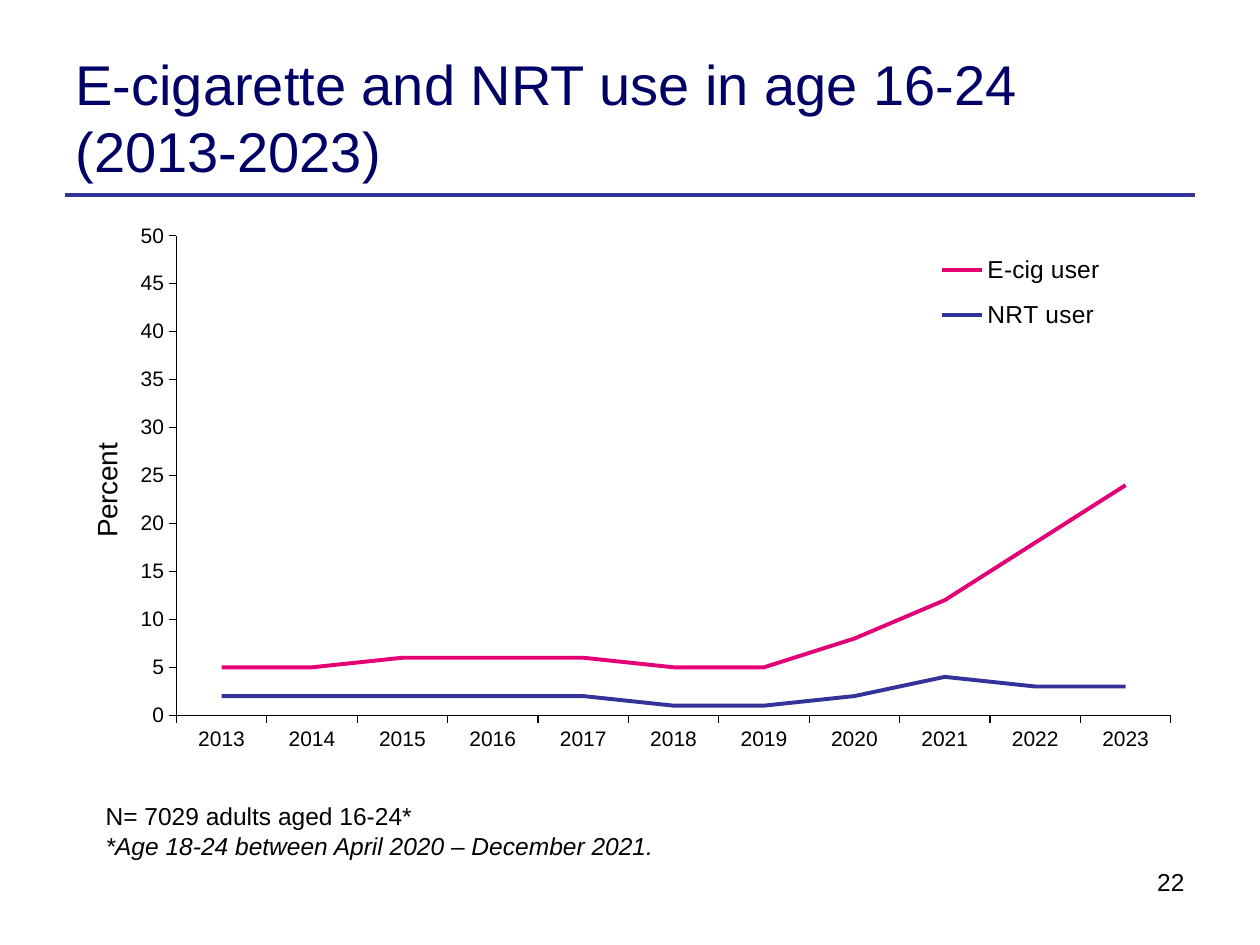
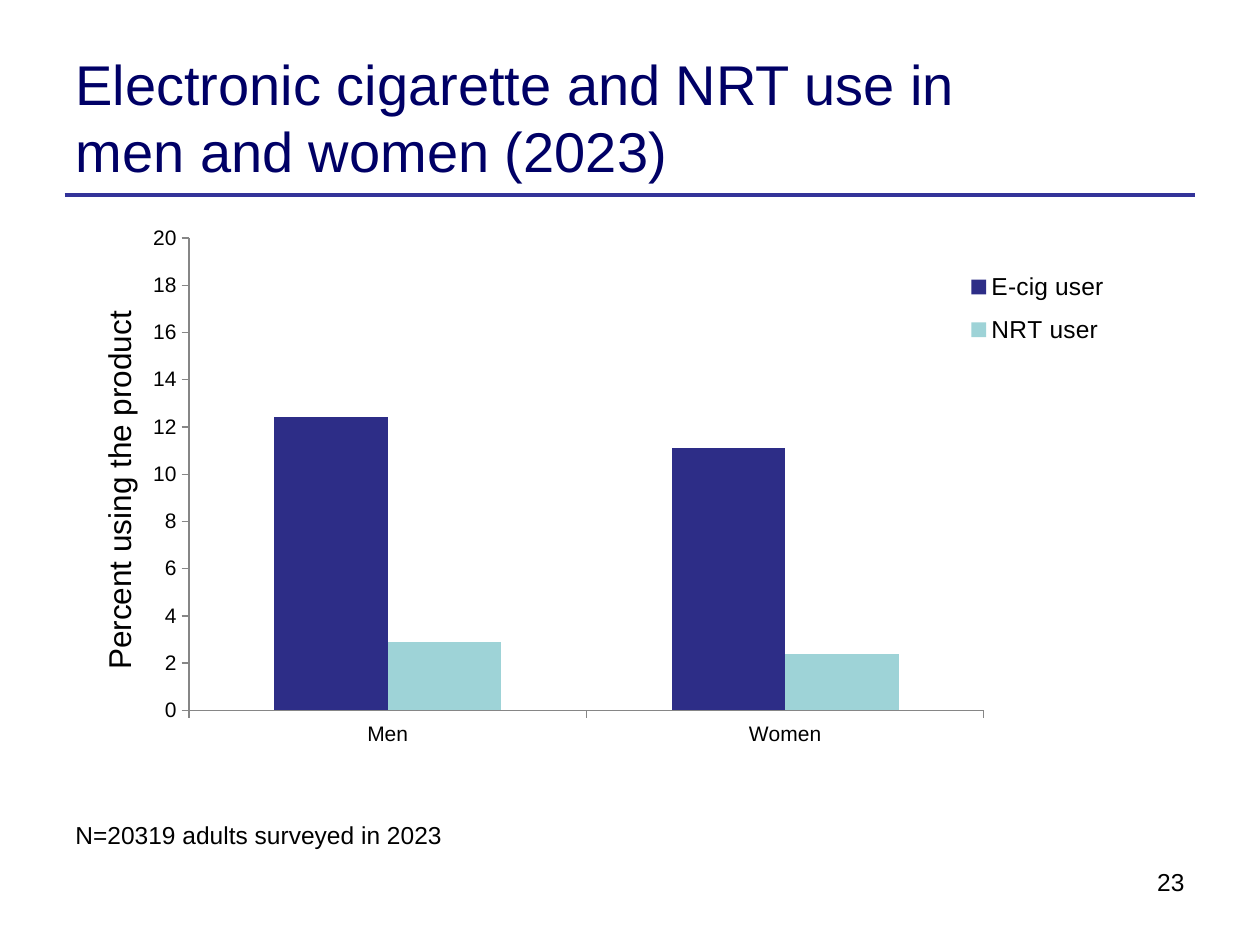
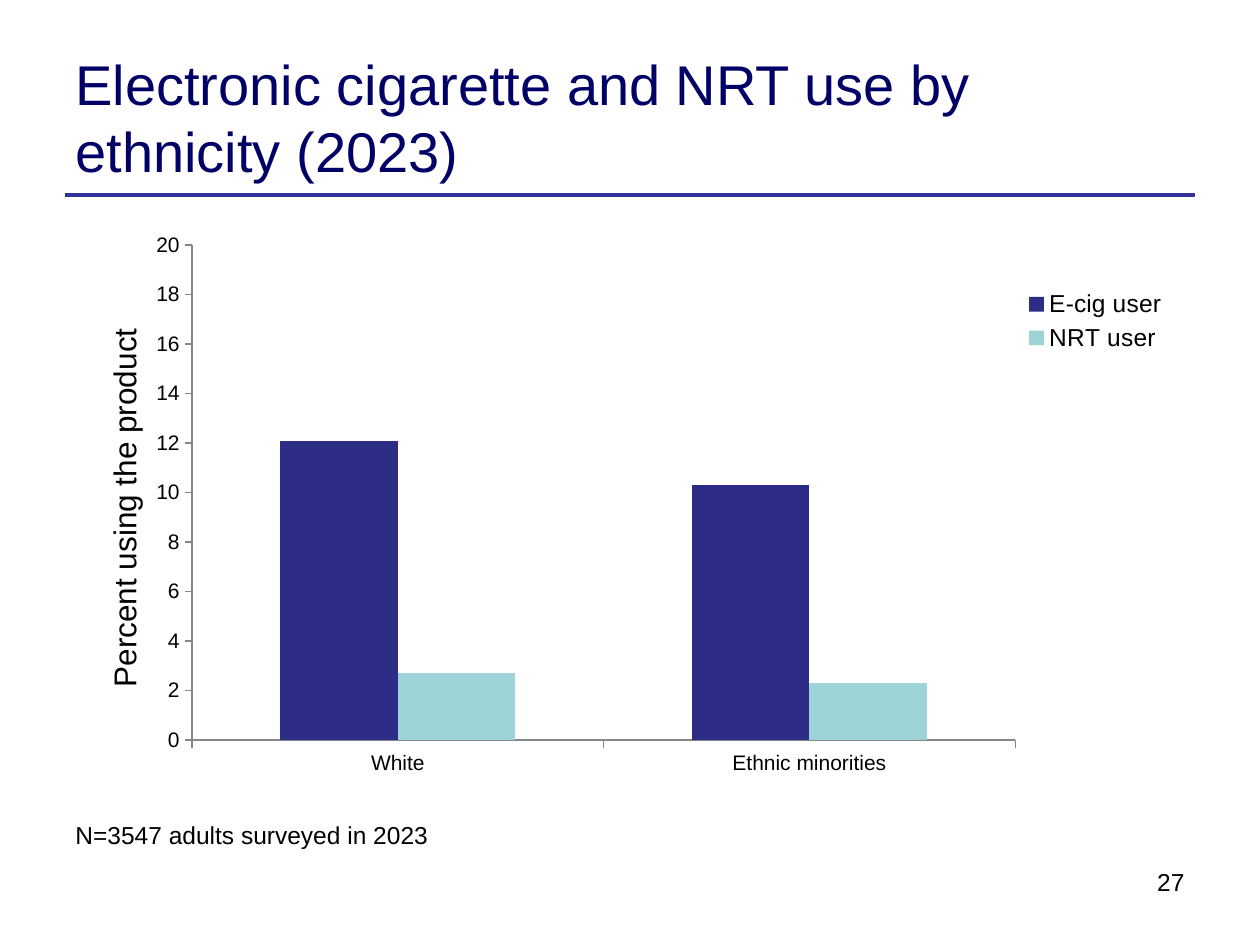
from pptx import Presentation
from pptx.chart.data import CategoryChartData
from pptx.dml.color import RGBColor
from pptx.enum.chart import XL_CHART_TYPE, XL_LEGEND_POSITION, XL_MARKER_STYLE, XL_TICK_MARK
from pptx.enum.shapes import MSO_CONNECTOR
from pptx.enum.text import MSO_ANCHOR, MSO_AUTO_SIZE, PP_ALIGN
from pptx.oxml import parse_xml
from pptx.oxml.ns import nsdecls, qn
from pptx.util import Pt
from lxml import etree

LINE = XL_CHART_TYPE.LINE
COLUMN = XL_CHART_TYPE.COLUMN_CLUSTERED
LEGEND_RIGHT = XL_LEGEND_POSITION.RIGHT
NO_MARKER = XL_MARKER_STYLE.NONE
TICK_OUTSIDE, TICK_NONE = XL_TICK_MARK.OUTSIDE, XL_TICK_MARK.NONE
STRAIGHT = MSO_CONNECTOR.STRAIGHT
TOP, MIDDLE = MSO_ANCHOR.TOP, MSO_ANCHOR.MIDDLE
LEFT, RIGHT = PP_ALIGN.LEFT, PP_ALIGN.RIGHT
NO_AUTOFIT = MSO_AUTO_SIZE.NONE

FONT = "Arial"
COLORS = {
    "title": "000066",
    "rule": "333399",
    "text": "000000",
    "axis": "868686",
    "pink": "E40075",
    "indigo": "2D2D87",
    "aqua": "9ED3D7",
}
SERIES_NAMES = ("E-cig user", "NRT user")

# Boxes as left, top, width, height in points
TITLE_BOX = (36, 21.6, 568, 90)
NUMBER_BOX = (484.5, 491.75, 199.5, 37.5)


def color(name):
    return RGBColor.from_string(COLORS[name])


def points(box):
    return [Pt(length) for length in box]


def format_font(font, size, name="text", italic=False):
    font.name = FONT
    font.size = Pt(size)
    font.bold = False
    font.italic = italic
    font.color.rgb = color(name)


def write_text(frame, text, size=14, name="text", italic=False,
               align=LEFT, anchor=TOP, wrap=True, add=False):
    """Write one paragraph, or add it after those already there."""
    frame.word_wrap = wrap
    frame.auto_size = NO_AUTOFIT
    frame.vertical_anchor = anchor
    paragraph = frame.add_paragraph() if add else frame.paragraphs[0]
    paragraph.alignment = align
    run = paragraph.add_run()
    run.text = text
    format_font(run.font, size, name, italic)


def add_base_slide(presentation, title, number):
    """Title, rule below it and slide number."""
    slide = presentation.slides.add_slide(presentation.slide_layouts[5])
    placeholder = slide.shapes.title
    placeholder.left, placeholder.top, placeholder.width, placeholder.height = points(TITLE_BOX)
    write_text(placeholder.text_frame, title, size=32, name="title", anchor=MIDDLE)

    rule = slide.shapes.add_connector(STRAIGHT, Pt(37), Pt(111.25), Pt(683), Pt(111.25))
    rule.line.color.rgb = color("rule")
    rule.line.width = Pt(2.25)
    etree.SubElement(rule._element.spPr, qn("a:effectLst"))

    number_box = slide.shapes.add_textbox(*points(NUMBER_BOX))
    write_text(number_box.text_frame, str(number), align=RIGHT)
    return slide


def add_note(slide, box, text, remark=None, wrap=False):
    frame = slide.shapes.add_textbox(*points(box)).text_frame
    write_text(frame, text, wrap=wrap)
    if remark:
        write_text(frame, remark, italic=True, wrap=wrap, add=True)


def place_part(part, chart_box, box, inner=False):
    """Lay out a chart part from a box in points relative to the chart."""
    scale = chart_box[2:] * 2
    fractions = [length / whole for length, whole in zip(box, scale)]
    target = '<c:layoutTarget val="inner"/>' if inner else ""
    values = "".join(f'<c:{tag} val="{fraction:.4f}"/>'
                     for tag, fraction in zip("xywh", fractions))
    layout = parse_xml(
        f'<c:layout {nsdecls("c")}><c:manualLayout>{target}'
        '<c:xMode val="edge"/><c:yMode val="edge"/>'
        f'{values}</c:manualLayout></c:layout>')
    for old in part.findall(qn("c:layout")):
        part.remove(old)
    before = [child for child in part
              if child.tag in (qn("c:tx"), qn("c:legendPos"), qn("c:legendEntry"))]
    part.insert(len(before), layout)


def format_axis(axis, line_color):
    axis.has_major_gridlines = False
    axis.major_tick_mark = TICK_OUTSIDE
    axis.minor_tick_mark = TICK_NONE
    axis.format.line.color.rgb = color(line_color)
    axis.format.line.width = Pt(0.75)
    format_font(axis.tick_labels.font, 12)


def add_usage_chart(slide, kind, box, categories, values, colors, maximum, step, axis_title,
                    title_size, axis_color, plot_box, legend_box, title_at):
    data = CategoryChartData()
    data.categories = categories
    for name, numbers in zip(SERIES_NAMES, values):
        data.add_series(name, numbers)
    chart = slide.shapes.add_chart(kind, *points(box), data).chart
    chart.has_title = False
    format_font(chart.font, 12)

    # Series
    plot = chart.plots[0]
    plot.vary_by_categories = False
    if kind == COLUMN:
        plot.gap_width = 150
        plot.overlap = 0
    for series, name in zip(plot.series, colors):
        if kind == LINE:
            series.smooth = False
            series.marker.style = NO_MARKER
            series.format.line.color.rgb = color(name)
            series.format.line.width = Pt(2.25)
        else:
            series.format.fill.solid()
            series.format.fill.fore_color.rgb = color(name)

    # Axes
    for axis in (chart.category_axis, chart.value_axis):
        format_axis(axis, axis_color)
    value_axis = chart.value_axis
    value_axis.minimum_scale = 0
    value_axis.maximum_scale = maximum
    value_axis.major_unit = step
    title_frame = value_axis.axis_title.text_frame
    title_frame.text = axis_title
    format_font(title_frame.paragraphs[0].runs[0].font, title_size)

    # Legend
    chart.has_legend = True
    legend = chart.legend
    legend.position = LEGEND_RIGHT
    legend.include_in_layout = False
    format_font(legend.font, 14)

    place_part(plot._element.getparent(), box, plot_box, inner=True)
    place_part(legend._element, box, legend_box)
    place_part(value_axis.axis_title._element, box, title_at)


def add_trend_slide(presentation):
    slide = add_base_slide(presentation, "E-cigarette and NRT use in age 16-24 (2013-2023)", 22)
    add_usage_chart(
        slide, LINE, (36, 123.75, 648, 356.5),
        [str(year) for year in range(2013, 2024)],
        [(5, 5, 6, 6, 6, 5, 5, 8, 12, 18, 24), (2, 2, 2, 2, 2, 1, 1, 2, 4, 3, 3)],
        ("pink", "rule"), 50, 5, "Percent", 16, "text",
        plot_box=(64.8, 11, 568.3, 274), legend_box=(496, 13, 103, 61), title_at=(12, 126.5))
    add_note(slide, (53.25, 454.25, 612.75, 41), "N= 7029 adults aged 16-24*",
             "*Age 18-24 between April 2020 – December 2021.", wrap=True)


def add_group_slide(presentation, title, number, note, top, **chart_format):
    slide = add_base_slide(presentation, title, number)
    add_usage_chart(slide, COLUMN, (36, top, 648, 322.5), colors=("indigo", "aqua"),
                    maximum=20, step=2, axis_title="Percent using the product",
                    title_size=18, axis_color="axis", **chart_format)
    add_note(slide, (36, 465, 224, 24.5), note)


def main():
    presentation = Presentation()
    presentation.slide_width, presentation.slide_height = Pt(720), Pt(540)
    add_trend_slide(presentation)
    add_group_slide(
        presentation, "Electronic cigarette and NRT use in men and women (2023)", 23,
        "N=20319 adults surveyed in 2023", 126,
        categories=("Men", "Women"), values=[(12.4, 11.1), (2.9, 2.4)],
        plot_box=(72, 10, 454.25, 270), legend_box=(514, 21.5, 86, 57.5), title_at=(17, 48.5))
    add_group_slide(
        presentation, "Electronic cigarette and NRT use by ethnicity (2023)", 27,
        "N=3547 adults surveyed in 2023", 127.5,
        categories=("White", "Ethnic minorities"), values=[(12.1, 10.3), (2.7, 2.3)],
        plot_box=(73.75, 12.5, 470.5, 283), legend_box=(549, 35, 82, 42), title_at=(20, 57))
    presentation.save("out.pptx")


if __name__ == "__main__":
    main()
